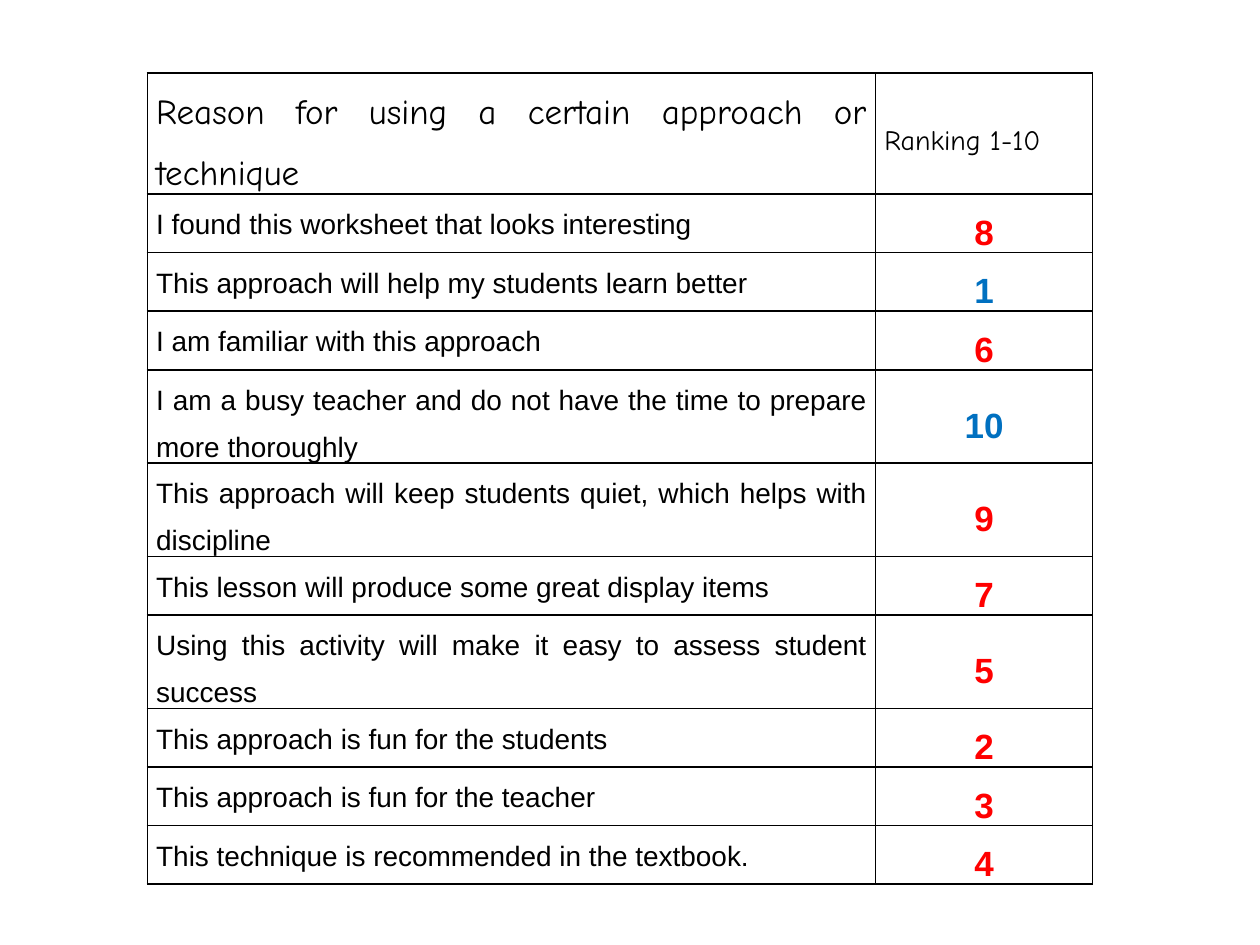
from typing import NamedTuple

from lxml import etree
from pptx import Presentation
from pptx.dml.color import RGBColor
from pptx.enum.text import MSO_ANCHOR, PP_ALIGN
from pptx.oxml.ns import qn
from pptx.util import Inches, Pt

TOP, MIDDLE = MSO_ANCHOR.TOP, MSO_ANCHOR.MIDDLE
JUSTIFY, CENTER = PP_ALIGN.JUSTIFY, PP_ALIGN.CENTER

BLACK = RGBColor(0x00, 0x00, 0x00)
RED = RGBColor(0xFF, 0x00, 0x00)
BLUE = RGBColor(0x00, 0x70, 0xC0)

BODY_FONT = "Arial"
HEADER_FONT = "Comic Neue"
COL_WIDTHS = (5.78, 1.72)
HEADER_HEIGHT = 0.72


class Style(NamedTuple):
    font: str
    size: int
    align: PP_ALIGN
    anchor: MSO_ANCHOR
    color: RGBColor = BLACK
    bold: bool = False


class Reason(NamedTuple):
    text: str
    rank: int
    height: float
    color: RGBColor = RED


REASON_HEADER = Style(HEADER_FONT, 20, JUSTIFY, MIDDLE)
RANK_HEADER = Style(HEADER_FONT, 16, JUSTIFY, MIDDLE)
REASON = Style(BODY_FONT, 16, JUSTIFY, TOP)
RANK = Style(BODY_FONT, 20, CENTER, MIDDLE, RED, True)

REASONS = [
    Reason("I found this worksheet that looks interesting", 8, 0.39),
    Reason("This approach will help my students learn better", 1, 0.45, BLUE),
    Reason("I am familiar with this approach", 6, 0.39),
    Reason("I am a busy teacher and do not have the time to prepare more thoroughly",
           10, 0.71, BLUE),
    Reason("This approach will keep students quiet, which helps with discipline", 9, 0.71),
    Reason("This lesson will produce some great display items", 7, 0.37),
    Reason("Using this activity will make it easy to assess student success", 5, 0.42),
    Reason("This approach is fun for the students", 2, 0.42),
    Reason("This approach is fun for the teacher", 3, 0.42),
    Reason("This technique is recommended in the textbook.", 4, 0.42),
]


def add_borders(cell) -> None:
    tc_pr = cell._tc.get_or_add_tcPr()
    for side in ("a:lnL", "a:lnR", "a:lnT", "a:lnB"):
        ln = etree.SubElement(tc_pr, qn(side), w=str(Pt(1)))
        fill = etree.SubElement(ln, qn("a:solidFill"))
        etree.SubElement(fill, qn("a:srgbClr"), val=str(BLACK))


def fill_cell(cell, text: str, style: Style) -> None:
    add_borders(cell)
    cell.fill.background()
    cell.margin_left = cell.margin_right = Inches(0.07)
    cell.margin_top = cell.margin_bottom = 0
    cell.vertical_anchor = style.anchor
    p = cell.text_frame.paragraphs[0]
    p.text = text
    p.alignment = style.align
    p.line_spacing = 1.5
    p.font.name = style.font
    p.font.size = Pt(style.size)
    p.font.bold = style.bold
    p.font.color.rgb = style.color


def add_ranking_table(slide) -> None:
    frame = slide.shapes.add_table(len(REASONS) + 1, len(COL_WIDTHS), Inches(1.17),
                                   Inches(0.58), Inches(sum(COL_WIDTHS)), Inches(6.56))
    table = frame.table
    table.first_row = True
    table.horz_banding = False
    for column, width in zip(table.columns, COL_WIDTHS):
        column.width = Inches(width)

    table.rows[0].height = Inches(HEADER_HEIGHT)
    fill_cell(table.cell(0, 0), "Reason for using a certain approach or technique",
              REASON_HEADER)
    fill_cell(table.cell(0, 1), "Ranking 1-10", RANK_HEADER)
    for i, reason in enumerate(REASONS, start=1):
        table.rows[i].height = Inches(reason.height)
        fill_cell(table.cell(i, 0), reason.text, REASON)
        fill_cell(table.cell(i, 1), str(reason.rank), RANK._replace(color=reason.color))
    frame.height = Inches(6.56)


def main() -> None:
    prs = Presentation()
    prs.slide_width, prs.slide_height = Inches(10), Inches(7.5)
    add_ranking_table(prs.slides.add_slide(prs.slide_layouts[6]))
    prs.save("out.pptx")


if __name__ == "__main__":
    main()
